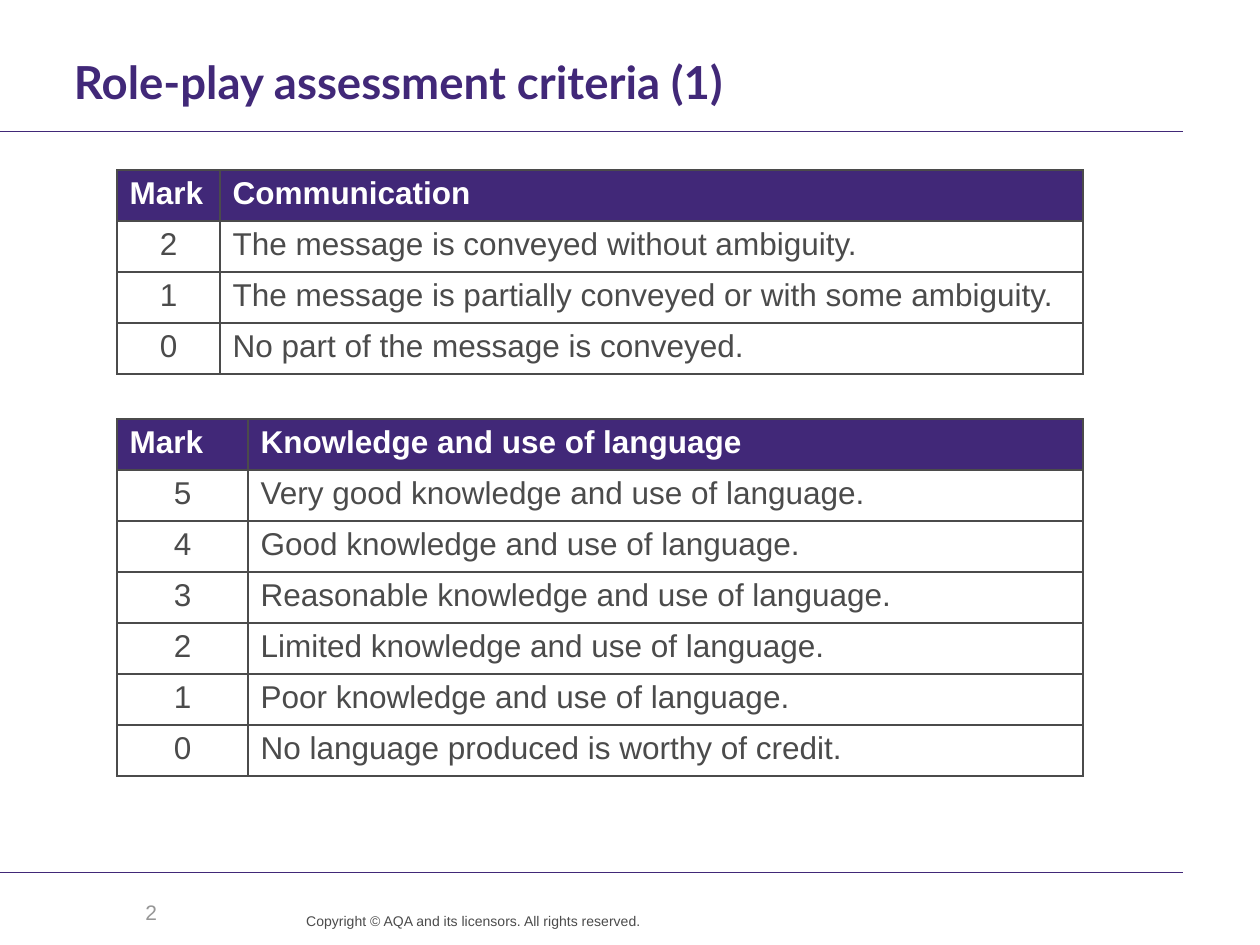
"""Build the role-play assessment criteria slide with its two mark tables."""
from lxml import etree
from pptx import Presentation
from pptx.dml.color import RGBColor
from pptx.enum.shapes import MSO_CONNECTOR
from pptx.enum.text import MSO_ANCHOR, PP_ALIGN
from pptx.oxml.ns import qn
from pptx.util import Emu, Pt

LEFT, CENTER, RIGHT = PP_ALIGN.LEFT, PP_ALIGN.CENTER, PP_ALIGN.RIGHT
TOP, MIDDLE = MSO_ANCHOR.TOP, MSO_ANCHOR.MIDDLE
STRAIGHT = MSO_CONNECTOR.STRAIGHT

COLORS = {"purple": "412878", "text": "4B4B4B", "muted": "969696", "white": "FFFFFF"}
SCALE = 914400 / 126
ROW_HEIGHT = 51
RULE_TOPS, RULE_END = (132, 873), 1183

TEXTS = [
    dict(text="Role-play assessment criteria (1)", at=(74, 60, 1109, 59), insets=(0, 0, 13, 0),
         font="Lato", size=26, color="purple", bold=True, spacing=28),
    dict(text="2", at=(74, 887, 96, 50), insets=(13, 6, 13, 6),
         size=12, color="muted", align=RIGHT, anchor=MIDDLE),
    dict(text="Copyright © AQA and its licensors. All rights reserved.",
         at=(272, 912, 369, 33), size=8, color="text", align=RIGHT, spacing=10),
]

TABLES = [
    dict(at=(117, 170), columns=(103, 863), rows=[
        ("Mark", "Communication"),
        ("2", "The message is conveyed without ambiguity."),
        ("1", "The message is partially conveyed or with some ambiguity."),
        ("0", "No part of the message is conveyed."),
    ]),
    dict(at=(117, 419), columns=(131, 835), rows=[
        ("Mark", "Knowledge and use of language"),
        ("5", "Very good knowledge and use of language."),
        ("4", "Good knowledge and use of language."),
        ("3", "Reasonable knowledge and use of language."),
        ("2", "Limited knowledge and use of language."),
        ("1", "Poor knowledge and use of language."),
        ("0", "No language produced is worthy of credit."),
    ]),
]


def px(length):
    return Emu(round(length * SCALE))


def rgb(name):
    return RGBColor.from_string(COLORS[name])


def write(frame, text, size, color, font="Arial", bold=False, align=LEFT, spacing=None):
    para = frame.paragraphs[0]
    para.alignment = align
    if spacing:
        para.line_spacing = Pt(spacing)
    span = para.add_run()
    span.text = text
    span.font.name, span.font.size, span.font.bold = font, Pt(size), bold
    span.font.color.rgb = rgb(color)


def add_rule(page, top):
    rule = page.shapes.add_connector(STRAIGHT, 0, px(top), px(RULE_END), px(top))
    rule.line.color.rgb = rgb("purple")
    rule.line.width = Pt(0.6)
    etree.SubElement(rule.element.spPr, qn("a:effectLst"))


def add_text(page, at, insets=(0, 0, 0, 0), anchor=TOP, **style):
    frame = page.shapes.add_textbox(*map(px, at)).text_frame
    frame.word_wrap = True
    frame.vertical_anchor = anchor
    (frame.margin_left, frame.margin_top,
     frame.margin_right, frame.margin_bottom) = map(px, insets)
    write(frame, **style)


def add_borders(cell):
    properties = cell._tc.get_or_add_tcPr()
    for side in ("lnL", "lnR", "lnT", "lnB"):
        border = etree.SubElement(properties, qn(f"a:{side}"), w=str(Pt(1)))
        fill = etree.SubElement(border, qn("a:solidFill"))
        etree.SubElement(fill, qn("a:srgbClr"), val=COLORS["text"])


def add_marks(page, at, columns, rows):
    frame = page.shapes.add_table(len(rows), len(columns), *map(
        px, (*at, sum(columns), ROW_HEIGHT * len(rows))))
    table = frame.table
    table.horz_banding = False
    for column, width in zip(table.columns, columns):
        column.width = px(width)
    for i, row in enumerate(rows):
        table.rows[i].height = px(ROW_HEIGHT)
        header = i == 0
        for j, text in enumerate(row):
            cell = table.cell(i, j)
            add_borders(cell)
            if header:
                cell.fill.solid()
                cell.fill.fore_color.rgb = rgb("purple")
            else:
                cell.fill.background()
            write(cell.text_frame, text, 18, "white" if header else "text", bold=header,
                  align=CENTER if j == 0 and not header else LEFT)


def main():
    deck = Presentation()
    deck.slide_width, deck.slide_height = px(1260), px(945)
    page = deck.slides.add_slide(deck.slide_layouts[6])
    for top in RULE_TOPS:
        add_rule(page, top)
    for item in TEXTS:
        add_text(page, **item)
    for marks in TABLES:
        add_marks(page, **marks)
    deck.save("out.pptx")


if __name__ == "__main__":
    main()
